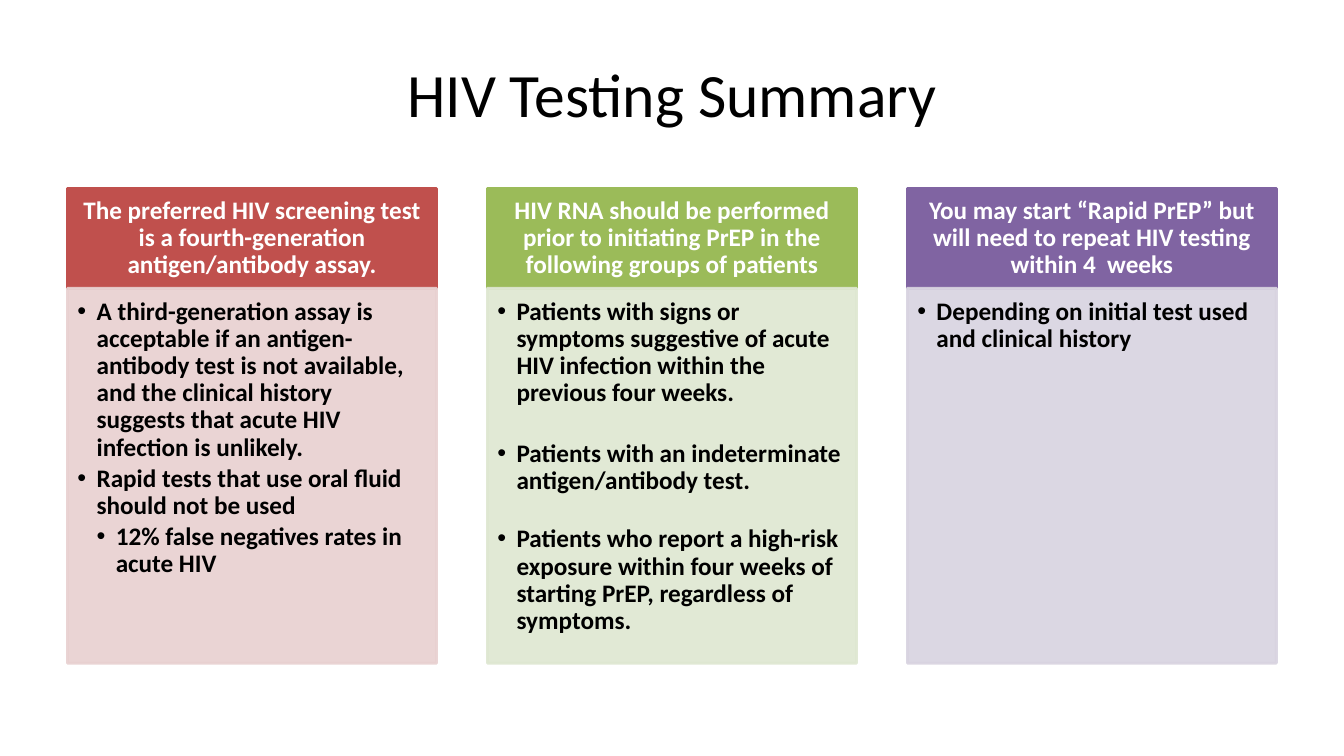
from lxml import etree
from pptx import Presentation
from pptx.dml.color import RGBColor
from pptx.enum.shapes import MSO_SHAPE
from pptx.enum.text import MSO_ANCHOR, PP_ALIGN
from pptx.oxml.ns import qn
from pptx.util import Inches, Pt

RECTANGLE = MSO_SHAPE.RECTANGLE
MIDDLE, TOP = MSO_ANCHOR.MIDDLE, MSO_ANCHOR.TOP
CENTER, LEFT = PP_ALIGN.CENTER, PP_ALIGN.LEFT

PAGE_WIDTH, PAGE_HEIGHT = 13.33, 7.5
MARGIN = 0.67
CONTENT_WIDTH = PAGE_WIDTH - 2 * MARGIN
COLUMN_WIDTH = 3.66
COLUMN_TOP, COLUMN_HEIGHT = 1.87, 4.71
HEADER_SHARE = 0.21
INDENT = 0.19
FONT = "Calibri"
TIGHT = 2.7

# Each bullet: text, level, space after in points
COLUMNS = [
    ("C0504D", "E8D0D0",
     "The preferred HIV screening test is a fourth-generation antigen/antibody assay.",
     [("A third-generation assay is acceptable if an antigen-antibody test is not "
       "available, and the clinical history suggests that acute HIV infection is "
       "unlikely.", 0, TIGHT),
      ("Rapid tests that use oral fluid should not be used", 0, TIGHT),
      ("12% false negatives rates in acute HIV", 1, TIGHT)]),
    ("9BBB59", "DEE7D1",
     "HIV RNA should be performed prior to initiating PrEP in the following groups "
     "of patients",
     [("Patients with signs or symptoms suggestive of acute HIV infection within the "
       "previous four weeks.", 0, 24),
      ("Patients with an indeterminate antigen/antibody test.", 0, 22),
      ("Patients who report a high-risk exposure within four weeks of starting PrEP, "
       "regardless of symptoms.", 0, TIGHT)]),
    ("8064A2", "D8D3E0",
     "You may start “Rapid PrEP” but will need to repeat HIV testing within 4  weeks",
     [("Depending on initial test used and clinical history", 0, TIGHT)]),
]


def color(value):
    return RGBColor.from_string(value)


def set_frame(frame, anchor, insets):
    frame.word_wrap = True
    frame.vertical_anchor = anchor
    (frame.margin_left, frame.margin_top,
     frame.margin_right, frame.margin_bottom) = map(Inches, insets)


def write(para, text, size, ink, bold, align):
    para.text = text
    para.alignment = align
    for span in para.runs:
        span.font.name = FONT
        span.font.size = Pt(size)
        span.font.bold = bold
        span.font.color.rgb = color(ink)


def add_bullet(para, level):
    properties = para._p.get_or_add_pPr()
    properties.set("marL", str(Inches(INDENT * (level + 1))))
    properties.set("indent", str(-Inches(INDENT)))
    etree.SubElement(properties, qn("a:buFont"), typeface="Arial")
    etree.SubElement(properties, qn("a:buChar"), char="•")


def add_panel(page, box, fill, opacity=100):
    panel = page.shapes.add_shape(RECTANGLE, *map(Inches, box))
    panel.shadow.inherit = False
    panel.fill.solid()
    panel.fill.fore_color.rgb = color(fill)
    panel.line.color.rgb = color(fill)
    panel.line.width = Pt(2)
    if opacity < 100:
        for tone in panel._element.spPr.iter(qn("a:srgbClr")):
            etree.SubElement(tone, qn("a:alpha"), val=str(opacity * 1000))
    return panel


def add_title(page, box):
    title = page.shapes.add_textbox(*map(Inches, box))
    set_frame(title.text_frame, MIDDLE, (0.1, 0.05, 0.1, 0.05))
    write(title.text_frame.paragraphs[0], "HIV Testing Summary", 44, "000000",
          False, CENTER)


def add_column(page, box, header_fill, body_fill, heading, bullets):
    left, top, width, height = box
    header_height = height * HEADER_SHARE
    header = add_panel(page, (left, top, width, header_height), header_fill)
    set_frame(header.text_frame, MIDDLE, (0.14, 0.08, 0.14, 0.08))
    para = header.text_frame.paragraphs[0]
    write(para, heading, 18, "FFFFFF", True, CENTER)
    para.line_spacing = 0.9

    body_box = (left, top + header_height, width, height - header_height)
    frame = add_panel(page, body_box, body_fill, 90).text_frame
    set_frame(frame, TOP, (0.1, 0.1, 0.14, 0.16))
    for number, (text, level, space_after) in enumerate(bullets):
        para = frame.add_paragraph() if number else frame.paragraphs[0]
        write(para, text, 18, "000000", True, LEFT)
        para.level = level
        para.line_spacing = 0.9
        para.space_after = Pt(space_after)
        add_bullet(para, level)


def main():
    deck = Presentation()
    deck.slide_width, deck.slide_height = Inches(PAGE_WIDTH), Inches(PAGE_HEIGHT)
    page = deck.slides.add_slide(deck.slide_layouts[6])
    add_title(page, (MARGIN, 0.3, CONTENT_WIDTH, 1.25))
    step = (CONTENT_WIDTH - COLUMN_WIDTH) / (len(COLUMNS) - 1)
    for number, column in enumerate(COLUMNS):
        box = (MARGIN + number * step, COLUMN_TOP, COLUMN_WIDTH, COLUMN_HEIGHT)
        add_column(page, box, *column)
    deck.save("out.pptx")


if __name__ == "__main__":
    main()
